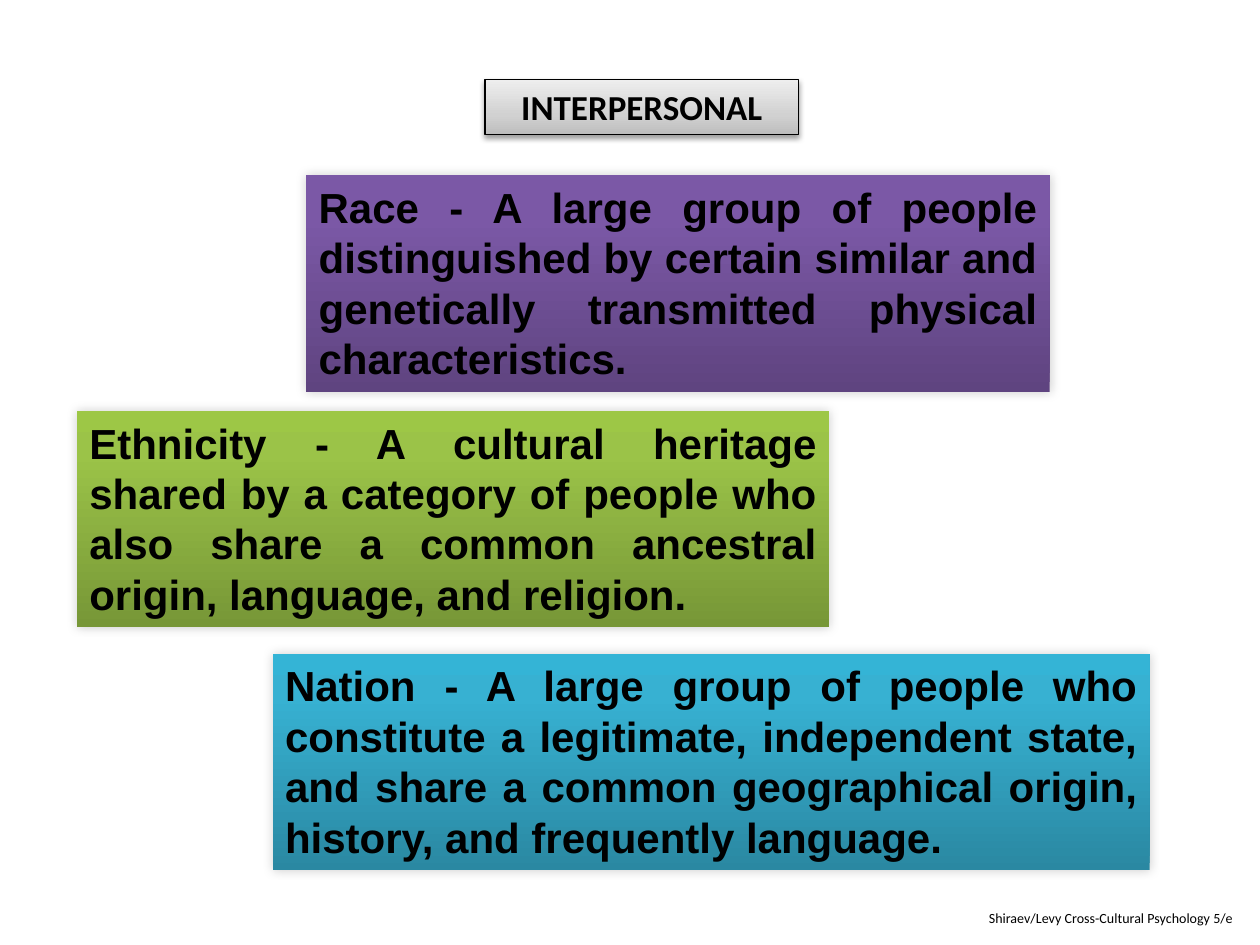
from dataclasses import dataclass

from lxml.etree import SubElement
from pptx import Presentation
from pptx.dml.color import RGBColor
from pptx.enum.shapes import MSO_SHAPE
from pptx.enum.text import MSO_ANCHOR, MSO_AUTO_SIZE, PP_ALIGN
from pptx.oxml.ns import qn
from pptx.util import Pt


@dataclass(frozen=True)
class Theme:
    ink: str = "000000"
    # Gradient stops run from the bottom edge to the top: (percent, colour)
    purple: tuple = ((0, "5F4480"), (80, "7B58A6"), (100, "7C57A8"))
    green: tuple = ((0, "779737"), (80, "9BC348"), (100, "9DC746"))
    blue: tuple = ((0, "2A88A2"), (80, "37B1D2"), (100, "34B4D6"))
    grey: tuple = ((0, "BDBDBD"), (35, "D1D1D1"), (100, "EEEEEE"))
    # Shadows: opacity percent, blur, distance, direction in degrees
    soft_shadow: tuple = (20, 6, 0, 225)
    title_shadow: tuple = (38, 3.1, 1.6, 90)
    body_font: str = "Arial"
    label_font: str = "Calibri"
    body_size: int = 24
    title_size: int = 20
    footer_size: int = 8


def write_text(shape, text, *, font, size, color, bold=False, align=PP_ALIGN.LEFT):
    frame = shape.text_frame
    frame.word_wrap = True
    frame.auto_size = MSO_AUTO_SIZE.SHAPE_TO_FIT_TEXT
    frame.vertical_anchor = MSO_ANCHOR.TOP
    paragraph = frame.paragraphs[0]
    paragraph.alignment = align
    run = paragraph.add_run()
    run.text = text
    run.font.name = font
    run.font.size = Pt(size)
    run.font.bold = bold
    run.font.color.rgb = RGBColor.from_string(color)


class SlideBuilder:
    def __init__(self, slide, theme):
        self.slide = slide
        self.theme = theme

    def panel(self, box, stops, shadow, outlined=False):
        shape = self.slide.shapes.add_shape(MSO_SHAPE.RECTANGLE, *map(Pt, box))
        self.gradient(shape, stops)
        if outlined:
            shape.line.color.rgb = RGBColor.from_string(self.theme.ink)
            shape.line.width = Pt(0.75)
        else:
            shape.line.fill.background()
        self.shadow(shape, *shadow)
        return shape

    def gradient(self, shape, stops):
        shape.fill.gradient()
        shape.fill.gradient_angle = 90
        stop_list = shape._element.spPr.find(".//" + qn("a:gsLst"))
        for old_stop in list(stop_list):
            stop_list.remove(old_stop)
        for percent, color in stops:
            stop = SubElement(stop_list, qn("a:gs"), pos=str(percent * 1000))
            SubElement(stop, qn("a:srgbClr"), val=color)

    def shadow(self, shape, opacity, blur, distance, direction):
        shape.shadow.inherit = False
        effects = shape._element.spPr.find(qn("a:effectLst"))
        outer = SubElement(effects, qn("a:outerShdw"), blurRad=str(Pt(blur)),
                           dist=str(Pt(distance)), dir=str(direction * 60000),
                           rotWithShape="0")
        color = SubElement(outer, qn("a:srgbClr"), val=self.theme.ink)
        SubElement(color, qn("a:alpha"), val=str(opacity * 1000))

    def definition(self, box, stops, text):
        theme = self.theme
        shape = self.panel(box, stops, theme.soft_shadow)
        write_text(shape, text, font=theme.body_font, size=theme.body_size,
                   color=theme.ink, bold=True, align=PP_ALIGN.JUSTIFY)

    def title(self, box, text):
        theme = self.theme
        shape = self.panel(box, theme.grey, theme.title_shadow, outlined=True)
        write_text(shape, text, font=theme.label_font, size=theme.title_size,
                   color=theme.ink, bold=True, align=PP_ALIGN.CENTER)

    def footer(self, box, text):
        theme = self.theme
        shape = self.slide.shapes.add_textbox(*map(Pt, box))
        write_text(shape, text, font=theme.label_font, size=theme.footer_size,
                   color=theme.ink)


def main():
    presentation = Presentation()
    presentation.slide_width, presentation.slide_height = Pt(720), Pt(540)
    theme = Theme()
    slide = presentation.slides.add_slide(presentation.slide_layouts[6])
    builder = SlideBuilder(slide, theme)

    # Definitions, staggered left and right
    definition_height = 123.6
    definitions = (
        (175, 100.2, 424.8, theme.purple,
         "Race - A large group of people distinguished by certain similar and "
         "genetically transmitted physical characteristics."),
        (44, 234.8, 429.8, theme.green,
         "Ethnicity - A cultural heritage shared by a category of people who "
         "also share a common ancestral origin, language, and religion."),
        (155.8, 373.6, 501.2, theme.blue,
         "Nation - A large group of people who constitute a legitimate, "
         "independent state, and share a common geographical origin, history, "
         "and frequently language."),
    )
    for left, top, width, stops, text in definitions:
        builder.definition((left, top, width, definition_height), stops, text)

    # Title and source line
    builder.title((277.2, 45.4, 179.2, 31.5), "INTERPERSONAL")
    builder.footer((558, 516.2, 156.2, 17), "Shiraev/Levy Cross-Cultural Psychology 5/e")

    presentation.save("out.pptx")


if __name__ == "__main__":
    main()
